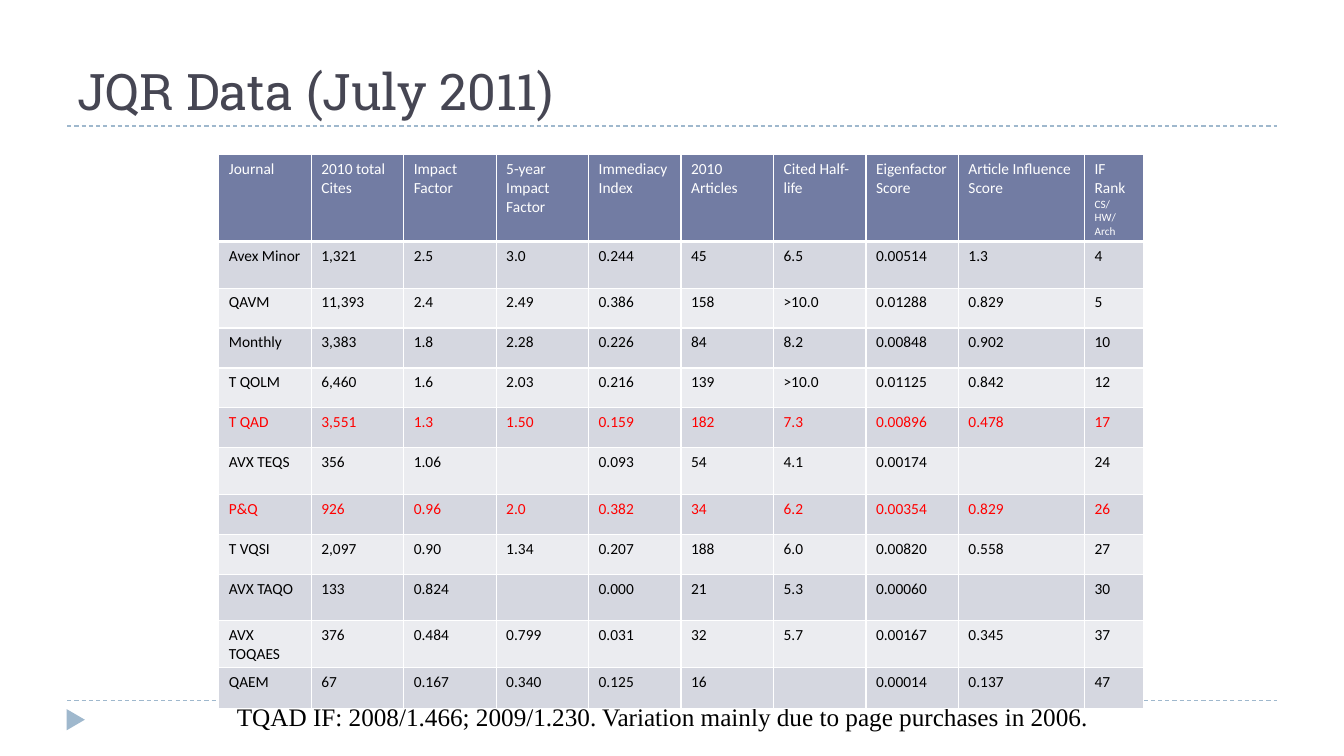
import pptx
import pptx.dml.color
import pptx.enum.dml
import pptx.enum.shapes
import pptx.enum.text
import pptx.oxml
import pptx.oxml.ns
import pptx.util
from lxml import etree

WIDTH, HEIGHT = 13.33, 7.5
COLORS = {
    "title": "464653", "rule": "9FB8CD", "header": "727CA3", "odd": "D5D7E0",
    "even": "EBECF0", "white": "FFFFFF", "black": "000000", "accent": "FF0000",
}
COLUMN_UNITS = [11] * 8 + [15, 7]
ROW_UNITS = [13, 7, 6, 6, 6, 6, 7, 6, 6, 7, 7, 6]
HIGHLIGHTED = {"T QAD", "P&Q"}
JOURNALS = [
    ["Journal", "2010 total Cites", "Impact Factor", "5-year Impact Factor", "Immediacy Index",
     "2010 Articles", "Cited Half-life", "Eigenfactor Score", "Article Influence Score",
     "IF Rank\nCS/HW/Arch"],
    ["Avex Minor", "1,321", "2.5", "3.0", "0.244", "45", "6.5", "0.00514", "1.3", "4"],
    ["QAVM", "11,393", "2.4", "2.49", "0.386", "158", ">10.0", "0.01288", "0.829", "5"],
    ["Monthly", "3,383", "1.8", "2.28", "0.226", "84", "8.2", "0.00848", "0.902", "10"],
    ["T QOLM", "6,460", "1.6", "2.03", "0.216", "139", ">10.0", "0.01125", "0.842", "12"],
    ["T QAD", "3,551", "1.3", "1.50", "0.159", "182", "7.3", "0.00896", "0.478", "17"],
    ["AVX TEQS", "356", "1.06", "", "0.093", "54", "4.1", "0.00174", "", "24"],
    ["P&Q", "926", "0.96", "2.0", "0.382", "34", "6.2", "0.00354", "0.829", "26"],
    ["T VQSI", "2,097", "0.90", "1.34", "0.207", "188", "6.0", "0.00820", "0.558", "27"],
    ["AVX TAQO", "133", "0.824", "", "0.000", "21", "5.3", "0.00060", "", "30"],
    ["AVX TOQAES", "376", "0.484", "0.799", "0.031", "32", "5.7", "0.00167", "0.345", "37"],
    ["QAEM", "67", "0.167", "0.340", "0.125", "16", "", "0.00014", "0.137", "47"],
]


def rgb(name):
    """Return the named colour."""
    return pptx.dml.color.RGBColor.from_string(COLORS[name])


def inches(*lengths):
    """Convert lengths in inches to slide units."""
    return [pptx.util.Inches(length) for length in lengths]


def style_paragraph(para, font, size, color):
    """Format every run of a paragraph."""
    for span in para.runs:
        span.font.name = font
        span.font.size = pptx.util.Pt(size)
        span.font.color.rgb = rgb(color)


def add_text(page, box, text, font, size, color, wrap=True):
    """Place one line of text in a box, on its bottom edge if it wraps."""
    frame = page.shapes.add_textbox(*inches(*box)).text_frame
    frame.text = text
    frame.word_wrap = wrap
    if wrap:
        frame.vertical_anchor = pptx.enum.text.MSO_ANCHOR.BOTTOM
    else:
        frame.auto_size = pptx.enum.text.MSO_AUTO_SIZE.SHAPE_TO_FIT_TEXT
    style_paragraph(frame.paragraphs[0], font, size, color)


def add_rule(page, left, top, width):
    """Draw a dashed horizontal rule."""
    rule = page.shapes.add_connector(
        pptx.enum.shapes.MSO_CONNECTOR.STRAIGHT, *inches(left, top, left + width, top))
    rule.line.color.rgb = rgb("rule")
    rule.line.width = pptx.util.Pt(0.75)
    rule.line.dash_style = pptx.enum.dml.MSO_LINE.DASH
    etree.SubElement(rule._element.spPr, pptx.oxml.ns.qn("a:effectLst"))


def add_frame(page, box):
    """Draw the rules at the top and bottom of a box and the corner marker."""
    left, top, width, height = box
    for level in (top + height, top):
        add_rule(page, left, level, width)
    marker = page.shapes.add_shape(
        pptx.enum.shapes.MSO_SHAPE.ISOSCELES_TRIANGLE,
        *inches(left - 0.02, top + height + 0.1, 0.21, 0.18))
    marker.rotation = 90
    marker.shadow.inherit = False
    marker.fill.solid()
    marker.fill.fore_color.rgb = rgb("rule")
    marker.line.fill.background()


def add_borders(cell, bottom):
    """Give a cell white borders, with the bottom one of the given width."""
    properties = cell._tc.get_or_add_tcPr()
    for side, points in {"L": 1, "R": 1, "T": 1, "B": bottom}.items():
        properties.append(pptx.oxml.parse_xml(
            f'<a:ln{side} {pptx.oxml.ns.nsdecls("a")} w="{pptx.util.Pt(points)}">'
            f'<a:solidFill><a:srgbClr val="{COLORS["white"]}"/></a:solidFill></a:ln{side}>'))


def fill_cell(cell, text, fill, color, bottom):
    """Write and format one table cell."""
    cell.text = text
    add_borders(cell, bottom)
    cell.fill.solid()
    cell.fill.fore_color.rgb = rgb(fill)
    for index, para in enumerate(cell.text_frame.paragraphs):
        style_paragraph(para, "Calibri", 8 if index else 11, color)


def add_journal_table(page, box):
    """Build the journal table, sharing the box out by column and row units."""
    left, top, width, height = box
    table = page.shapes.add_table(len(JOURNALS), len(COLUMN_UNITS), *inches(*box)).table
    for column, units in zip(table.columns, COLUMN_UNITS):
        column.width = pptx.util.Inches(width * units / sum(COLUMN_UNITS))
    for row, units in zip(table.rows, ROW_UNITS):
        row.height = pptx.util.Inches(height * units / sum(ROW_UNITS))
    for number, values in enumerate(JOURNALS):
        if number == 0:
            fill, color, bottom = "header", "white", 3
        else:
            fill = "odd" if number % 2 else "even"
            color = "accent" if values[0] in HIGHLIGHTED else "black"
            bottom = 1
        for position, value in enumerate(values):
            fill_cell(table.cell(number, position), value, fill, color, bottom)


def build_page(page, width, height):
    """Lay out the slide within the given size."""
    margin = width * 0.05
    inner = width * 0.9
    add_frame(page, (margin, height / 6, inner, height * 0.76))
    add_text(page, (margin, 0.17, inner, height / 6 - 0.17),
             "JQR Data (July 2011)", "Roboto Slab", 36, "title")
    add_text(page, (2.25, 6.91, 8.65, 0.4),
             "TQAD IF: 2008/1.466; 2009/1.230. Variation mainly due to page purchases in 2006.",
             "Times New Roman", 18, "black", wrap=False)
    add_journal_table(page, (2.17, 1.53, 9.17, 5.48))


def main():
    """Create and save the deck."""
    deck = pptx.Presentation()
    deck.slide_width, deck.slide_height = inches(WIDTH, HEIGHT)
    page = deck.slides.add_slide(deck.slide_layouts[6])
    build_page(page, WIDTH, HEIGHT)
    deck.save("out.pptx")


if __name__ == "__main__":
    main()
